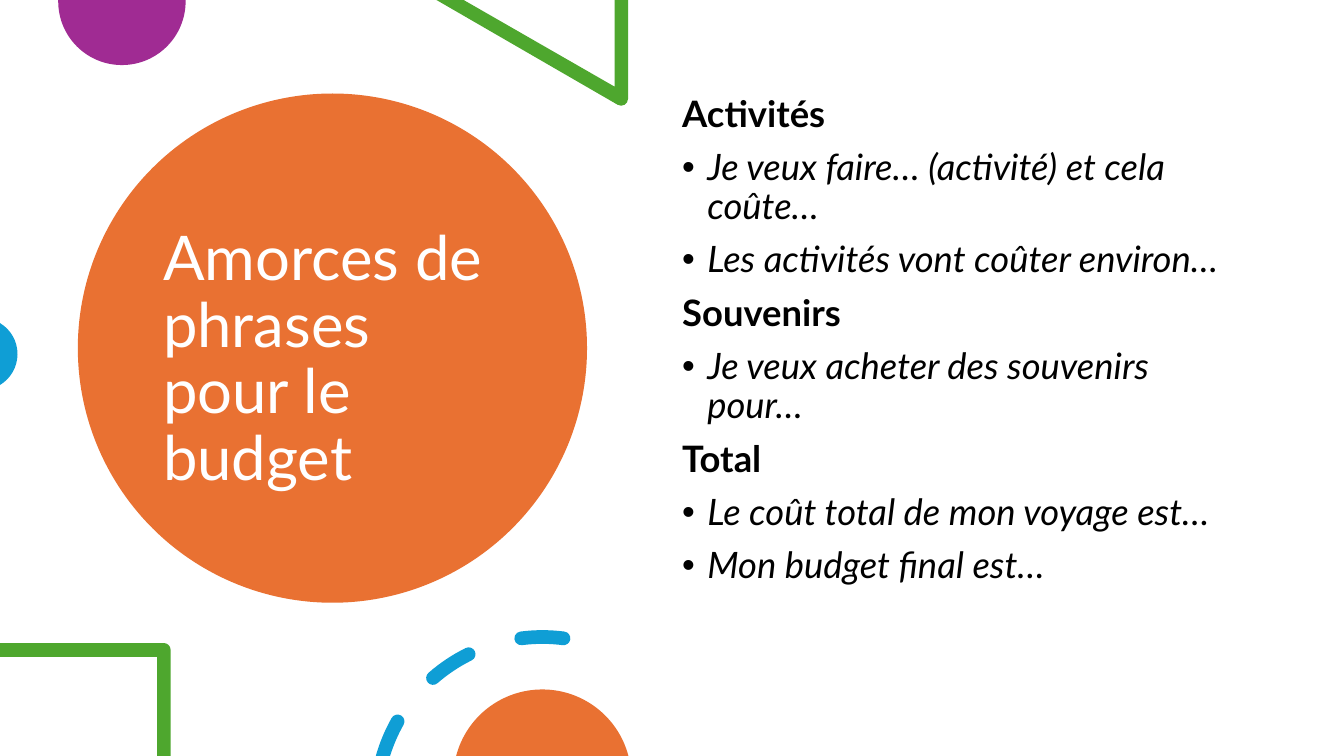
from dataclasses import dataclass
from math import ceil, cos, hypot, radians, sin, tan

from lxml import etree
from pptx import Presentation
from pptx.dml.color import RGBColor
from pptx.enum.shapes import MSO_SHAPE
from pptx.enum.text import MSO_ANCHOR
from pptx.oxml.ns import qn
from pptx.shapes.autoshape import Shape
from pptx.slide import Slide
from pptx.text.text import TextFrame
from pptx.util import Pt

OVAL = MSO_SHAPE.OVAL
TOP, MIDDLE = MSO_ANCHOR.TOP, MSO_ANCHOR.MIDDLE

ORANGE = RGBColor(0xE9, 0x71, 0x32)
PURPLE = RGBColor(0xA0, 0x2B, 0x93)
GREEN = RGBColor(0x4E, 0xA7, 0x2E)
BLUE = RGBColor(0x0F, 0x9E, 0xD5)
WHITE = RGBColor(0xFF, 0xFF, 0xFF)
BLACK = RGBColor(0, 0, 0)

FONT = "Lato"
WIDE, HIGH = 960, 540
INDENT = 18
CAP = 4.9  # half the width of a rounded stroke
RING_X, RING_Y, RING_R = 387.4, 573.8, 118.8

# A node is a corner (x, y) or a curve (two handles and an end point)
Node = tuple[float, ...]
Path = list[Node]


@dataclass
class Outline:
    paths: list[Path]
    color: RGBColor


@dataclass
class Line:
    text: str
    head: bool = False


LINES = [
    Line("Activités", head=True),
    Line("Je veux faire… (activité) et cela coûte…"),
    Line("Les activités vont coûter environ…"),
    Line("Souvenirs", head=True),
    Line("Je veux acheter des souvenirs pour…"),
    Line("Total", head=True),
    Line("Le coût total de mon voyage est…"),
    Line("Mon budget final est…"),
]


def arc(x: float, y: float, r: float, start: float, end: float) -> Path:
    """Curves along a circle, angles in degrees clockwise from the right."""
    count = ceil(abs(end - start) / 90)
    step = radians(end - start) / count
    pull = 4 / 3 * tan(step / 4) * r
    a = radians(start)
    nodes: Path = [(x + r * cos(a), y + r * sin(a))]
    for _ in range(count):
        b = a + step
        left, top = nodes[-1][-2:]
        right, low = x + r * cos(b), y + r * sin(b)
        nodes.append((left - pull * sin(a), top + pull * cos(a),
                      right + pull * sin(b), low - pull * cos(b), right, low))
        a = b
    return nodes


def cap(angle: float, turn: float) -> Path:
    """Half-round end of a dash on the ring."""
    t = radians(angle)
    x, y = RING_X + RING_R * cos(t), RING_Y + RING_R * sin(t)
    return arc(x, y, CAP, turn, turn + 180)


def band(outer: float, inner: float, end: float) -> Path:
    """Both sides of a dash, rounded at its far end."""
    return (arc(RING_X, RING_Y, RING_R + CAP, outer, end) + cap(end, end)
            + arc(RING_X, RING_Y, RING_R - CAP, end, inner))


def dash(start: float, end: float) -> Path:
    return band(start, start, end) + cap(start, start + 180)


OUTLINES = [
    # Purple and blue discs cut by the slide edges
    Outline([[(41.6, 0)] + [(132.6, 0)] + arc(87.1, 1, 45.5, 0, 180)], PURPLE),
    Outline([arc(-13.3, 252.9, 25.8, -58.5, 58.5)], BLUE),
    # Green corners of a triangle and a square
    Outline([[(311.8, 0), (331.2, 0), (439, 61.9), (439, 0), (448.6, 0)]
             + arc(443.7, 70.6, CAP, 0, 120)], GREEN),
    Outline([[(0, 459.3)] + arc(117, 464.2, CAP, -90, 0)
             + [(121.9, HIGH), (112.3, HIGH), (112.3, 469.2), (0, 469.2)]], GREEN),
    # Dashed ring around the lower orange disc
    Outline([band(195.9, 197.3, 209.5), dash(228.9, 243.7),
             dash(262.7, 277.3)], BLUE),
    Outline([arc(RING_X, 556.1, 63.6, 194.7, 345.3)], ORANGE),
]


def paint(shape: Shape, color: RGBColor) -> None:
    shape.shadow.inherit = False
    shape.fill.solid()
    shape.fill.fore_color.rgb = color
    shape.line.fill.background()


def tidy(path: Path) -> Path:
    """Drop corners that repeat the point before them."""
    kept = path[:1]
    for node in path[1:]:
        x, y = kept[-1][-2:]
        if hypot(node[-2] - x, node[-1] - y) > 0.05:
            kept.append(node)
    return kept


def draw(slide: Slide, item: Outline) -> None:
    paths = [tidy(path) for path in item.paths]
    pen = slide.shapes.build_freeform(*map(Pt, paths[0][0]), scale=1.0)
    for i, path in enumerate(paths):
        if i:
            pen.move_to(*map(Pt, path[0]))
        pen.add_line_segments([(Pt(node[k]), Pt(node[k + 1])) for node in path[1:]
                               for k in range(0, len(node), 2)], close=True)
    shape = pen.convert_to_shape()
    paint(shape, item.color)

    # Merge each handle, handle, end triple into one curve
    steps = iter(list(shape._element.iter(qn("a:lnTo"))))
    for node in [node for path in paths for node in path[1:]]:
        first, *rest = [next(steps) for _ in range(len(node) // 2)]
        if rest:
            first.tag = qn("a:cubicBezTo")
        for step in rest:
            first.append(step[0])
            step.getparent().remove(step)


def add_box(slide: Slide, left: float, top: float, width: float,
            height: float, anchor: MSO_ANCHOR) -> TextFrame:
    box = slide.shapes.add_textbox(Pt(left), Pt(top), Pt(width), Pt(height))
    frame = box.text_frame
    frame.word_wrap = True
    frame.vertical_anchor = anchor
    return frame


def write(frame: TextFrame, text: str, size: float, color: RGBColor,
          first: bool = True, bold: bool = False, bullet: bool = False) -> None:
    para = frame.paragraphs[0] if first else frame.add_paragraph()
    para.line_spacing = 0.9
    if not first:
        para.space_before = Pt(10)
    if bullet:
        props = para._p.get_or_add_pPr()
        props.set("marL", str(Pt(INDENT)))
        props.set("indent", str(-Pt(INDENT)))
        etree.SubElement(props, qn("a:buFont")).set("typeface", "Arial")
        etree.SubElement(props, qn("a:buChar")).set("char", "•")
    run = para.add_run()
    run.text = text
    font = run.font
    font.name, font.size = FONT, Pt(size)
    font.bold, font.italic = bold, bullet
    font.color.rgb = color


def main() -> None:
    deck = Presentation()
    deck.slide_width, deck.slide_height = Pt(WIDE), Pt(HIGH)
    slide = deck.slides.add_slide(deck.slide_layouts[6])

    # Title on its disc
    disc = slide.shapes.add_shape(OVAL, Pt(55.6), Pt(66.8), Pt(363.7), Pt(363.7))
    paint(disc, ORANGE)
    title = add_box(slide, 109.4, 97.2, 254.9, 320.4, MIDDLE)
    write(title, "Amorces de phrases pour le budget", 44, WHITE)

    # Shapes around the edges
    for item in OUTLINES:
        draw(slide, item)

    # Sentence starters
    body = add_box(slide, 480.2, 64.8, 414, 385.2, TOP)
    for i, line in enumerate(LINES):
        write(body, line.text, 26, BLACK, first=i == 0,
              bold=line.head, bullet=not line.head)

    deck.save("out.pptx")


if __name__ == "__main__":
    main()
